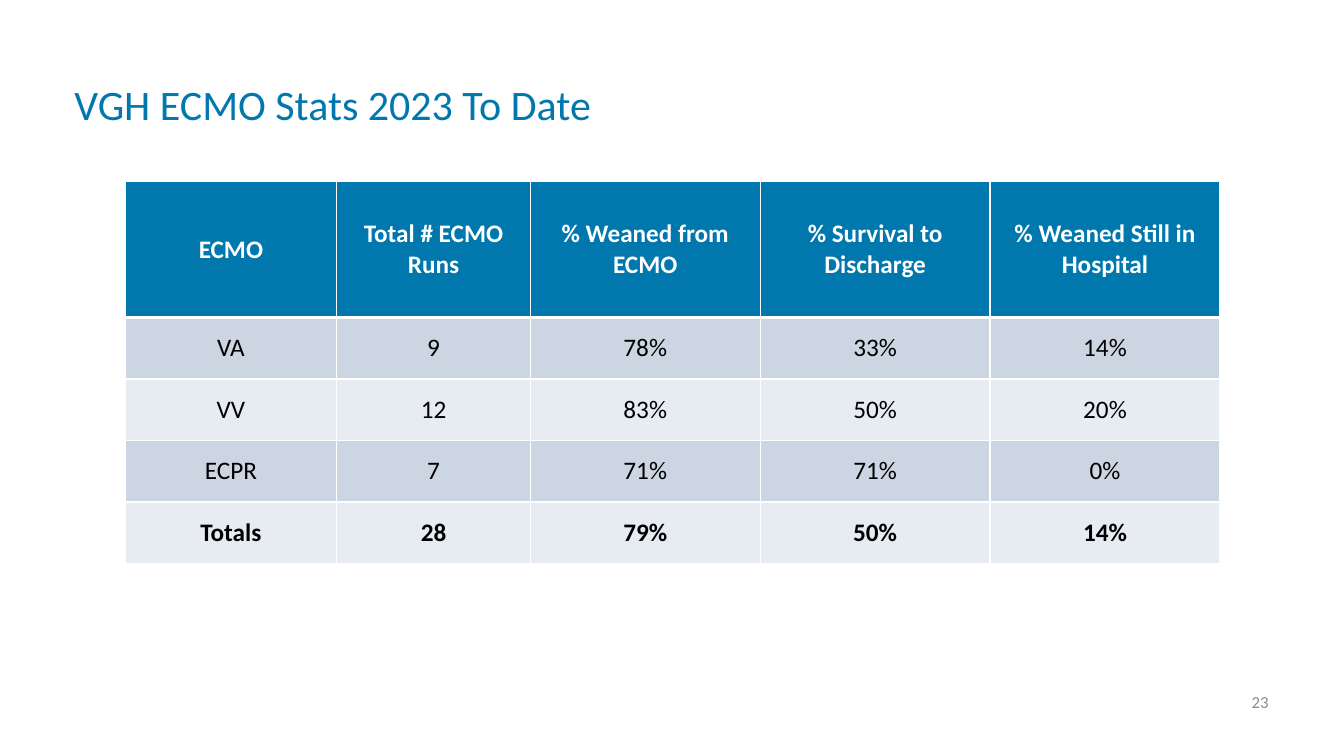
"""Build the ECMO statistics slide."""
from lxml import etree
from pptx import Presentation
from pptx.dml.color import RGBColor
from pptx.enum import text
from pptx.oxml import ns
from pptx.util import Inches, Pt

FONT = "Calibri"
BLUE = RGBColor(0x00, 0x78, 0xAE)
GREY = RGBColor(0x8C, 0x8C, 0x8C)
WHITE = RGBColor(0xFF, 0xFF, 0xFF)
BLACK = RGBColor(0x00, 0x00, 0x00)
BANDS = (RGBColor(0xE7, 0xEC, 0xF2), RGBColor(0xCC, 0xD6, 0xE3))

STATS = (
    ("ECMO", "Total # ECMO Runs", "% Weaned from ECMO",
     "% Survival to Discharge", "% Weaned Still in Hospital"),
    ("VA", "9", "78%", "33%", "14%"),
    ("VV", "12", "83%", "50%", "20%"),
    ("ECPR", "7", "71%", "71%", "0%"),
    ("Totals", "28", "79%", "50%", "14%"),
)
COLUMN_WIDTHS = (2.1, 1.92, 2.28, 2.28, 2.28)
HEADER_HEIGHT, ROW_HEIGHT = 1.35, 0.61


def style_text(para, size, color, align, bold=False):
    """Align a paragraph and format its runs."""
    para.alignment = align
    for span in para.runs:
        span.font.name = FONT
        span.font.size = Pt(size)
        span.font.bold = bold
        span.font.color.rgb = color


def add_label(page, box, wording, size, color, align):
    """Place one line of text, centred vertically in the given box."""
    frame = page.shapes.add_textbox(*map(Inches, box)).text_frame
    frame.word_wrap = True
    frame.vertical_anchor = text.MSO_ANCHOR.MIDDLE
    frame.text = wording
    style_text(frame.paragraphs[0], size, color, align)


def set_borders(cell, top, bottom):
    """Draw white cell borders, with the top and bottom widths in points."""
    properties = cell._tc.get_or_add_tcPr()
    for side, width in (("L", 1), ("R", 1), ("T", top), ("B", bottom)):
        line = etree.SubElement(properties, ns.qn(f"a:ln{side}"), w=str(Pt(width)))
        fill = etree.SubElement(line, ns.qn("a:solidFill"))
        etree.SubElement(fill, ns.qn("a:srgbClr"), val=str(WHITE))


def fill_cell(cell, wording, row):
    """Write and style one cell according to its row."""
    header, last = row == 0, row == len(STATS) - 1
    set_borders(cell, 3 if row == 1 else 1, 3 if header else 1)
    cell.fill.solid()
    cell.fill.fore_color.rgb = BLUE if header else BANDS[row % 2]
    cell.margin_left = cell.margin_right = cell.margin_top = cell.margin_bottom = 0
    cell.vertical_anchor = text.MSO_ANCHOR.MIDDLE
    cell.text = wording
    style_text(cell.text_frame.paragraphs[0], 18, WHITE if header else BLACK,
               text.PP_ALIGN.CENTER, header or last)


def add_stats_table(page, box):
    """Place the statistics table in the given box."""
    table = page.shapes.add_table(
        len(STATS), len(COLUMN_WIDTHS), *map(Inches, box)).table
    for column, width in zip(table.columns, COLUMN_WIDTHS):
        column.width = Inches(width)
    for index, record in enumerate(STATS):
        table.rows[index].height = Inches(ROW_HEIGHT if index else HEADER_HEIGHT)
        for position, wording in enumerate(record):
            fill_cell(table.cell(index, position), wording, index)


def main():
    """Create the deck and save it."""
    deck = Presentation()
    deck.slide_width, deck.slide_height = Inches(13.33), Inches(7.5)
    page = deck.slides.add_slide(deck.slide_layouts[6])
    add_label(page, (0.64, 0.73, 5.61, 0.59), "VGH ECMO Stats 2023 To Date",
              30, BLUE, text.PP_ALIGN.LEFT)
    add_stats_table(page, (1.24, 1.8, 10.86, 3.79))
    add_label(page, (9.68, 6.76, 3, 0.4), "23", 12, GREY, text.PP_ALIGN.RIGHT)
    deck.save("out.pptx")


if __name__ == "__main__":
    main()
